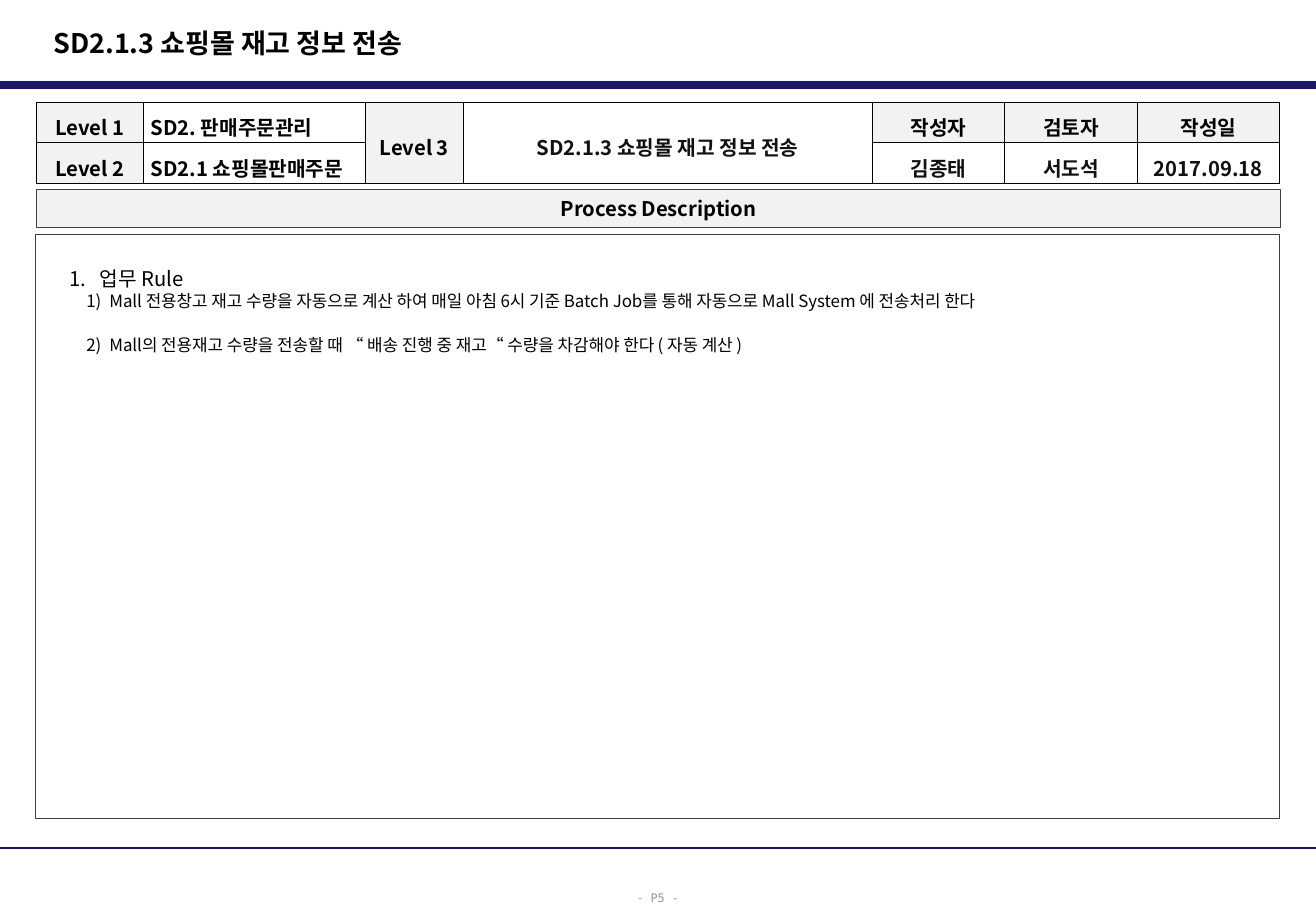
from dataclasses import dataclass

import pptx
import pptx.dml.color
import pptx.enum.shapes
import pptx.enum.text
import pptx.oxml.ns
import pptx.util
from lxml import etree

Inches = pptx.util.Inches
Pt = pptx.util.Pt
Align = pptx.enum.text.PP_ALIGN
Anchor = pptx.enum.text.MSO_ANCHOR
qn = pptx.oxml.ns.qn


@dataclass(frozen=True)
class Theme:
    font: str = "Noto Sans CJK KR"
    page_font: str = "DejaVu Sans Mono"
    navy: str = "191966"
    panel: str = "F2F2F2"
    frame: str = "404040"
    black: str = "000000"
    ink: str = "111111"
    grey: str = "969696"
    title_size: float = 16
    label_size: float = 12
    detail_size: float = 10
    page_size: float = 7
    hairline: float = 0.5


THEME = Theme()
TITLE = "SD2.1.3 쇼핑몰 재고 정보 전송"
COLUMN_WIDTHS = [0.88, 1.83, 0.8, 3.37, 1.09, 1.09, 1.17]
ROW_HEIGHTS = [0.28, 0.31]
HEADER_ROWS = [
    ["Level 1", "SD2. 판매주문관리", "Level 3", TITLE, "작성자", "검토자", "작성일"],
    ["Level 2", "SD2.1 쇼핑몰판매주문", "", "", "김종태", "서도석", "2017.09.18"],
]
LABELS = {"Level 1", "Level 2", "Level 3", "작성자", "검토자", "작성일"}
RULES = [
    "Mall 전용창고 재고 수량을 자동으로 계산 하여 매일 아침 6시 기준 Batch Job를 통해 "
    "자동으로 Mall System 에 전송처리 한다",
    "Mall의 전용재고 수량을 전송할 때 “ 배송 진행 중 재고“ 수량을 차감해야 한다 ( 자동 계산 )",
]


def rgb(value):
    return pptx.dml.color.RGBColor.from_string(value)


def apply_format(target, formats):
    for name, value in formats.items():
        setattr(target, name, value)


def place(shape, left, top, width, height):
    lengths = dict(left=left, top=top, width=width, height=height)
    apply_format(shape, {name: Inches(value) for name, value in lengths.items()})


def write(paragraph, text, size, color=THEME.black, bold=False, font=THEME.font, **formats):
    apply_format(paragraph, formats)
    run = paragraph.add_run()
    run.text = text
    apply_format(run.font, {"name": font, "size": Pt(size), "bold": bold})
    run.font.color.rgb = rgb(color)
    etree.SubElement(run.font._element, qn("a:ea"), typeface=font)


def number_paragraph(paragraph, scheme, margin, hanging):
    """Give the paragraph automatic numbering with a hanging indent."""
    properties = paragraph._p.get_or_add_pPr()
    properties.set("marL", str(Inches(margin)))
    properties.set("indent", str(-Inches(hanging)))
    etree.SubElement(properties, qn("a:buFont"), typeface=THEME.font)
    etree.SubElement(properties, qn("a:buAutoNum"), type=scheme)


def outline(shape):
    shape.line.color.rgb = rgb(THEME.frame)
    shape.line.width = Pt(THEME.hairline)


def add_rule(slide, top, weight):
    """Draw a line across the whole slide."""
    rule = slide.shapes.add_connector(
        pptx.enum.shapes.MSO_CONNECTOR.STRAIGHT,
        Inches(0), Inches(top), Inches(10.83), Inches(top))
    rule.line.color.rgb = rgb(THEME.navy)
    rule.line.width = Pt(weight)
    etree.SubElement(rule._element.spPr, qn("a:effectLst"))


def add_title(slide):
    title = slide.shapes.title
    place(title, 0.34, 0.16, 7.11, 0.38)
    apply_format(title.text_frame, {
        "vertical_anchor": Anchor.MIDDLE, "word_wrap": True,
        "auto_size": pptx.enum.text.MSO_AUTO_SIZE.NONE})
    write(title.text_frame.paragraphs[0], TITLE, THEME.title_size, bold=True,
          alignment=Align.LEFT)


def add_section_bar(slide):
    bar = slide.shapes.add_shape(
        pptx.enum.shapes.MSO_SHAPE.RECTANGLE,
        Inches(0.3), Inches(1.56), Inches(10.24), Inches(0.31))
    bar.shadow.inherit = False
    bar.fill.solid()
    bar.fill.fore_color.rgb = rgb(THEME.panel)
    outline(bar)
    bar.text_frame.vertical_anchor = Anchor.MIDDLE
    write(bar.text_frame.paragraphs[0], "Process Description", THEME.label_size,
          bold=True, alignment=Align.CENTER)


def add_cell_borders(cell):
    properties = cell._tc.get_or_add_tcPr()
    for side in ("lnL", "lnR", "lnT", "lnB"):
        border = etree.SubElement(properties, qn(f"a:{side}"), w=str(Pt(THEME.hairline)))
        fill = etree.SubElement(border, qn("a:solidFill"))
        etree.SubElement(fill, qn("a:srgbClr"), val=THEME.black)


def format_cell(cell, text, column):
    apply_format(cell, {
        "vertical_anchor": Anchor.MIDDLE,
        "margin_left": Inches(0.06), "margin_right": Inches(0.06),
        "margin_top": Inches(0.01), "margin_bottom": Inches(0.01)})
    add_cell_borders(cell)
    if text in LABELS:
        cell.fill.solid()
        cell.fill.fore_color.rgb = rgb(THEME.panel)
    else:
        cell.fill.background()
    if text:
        is_value = column >= 3 and text not in LABELS
        write(cell.text_frame.paragraphs[0], text, THEME.label_size,
              THEME.ink if is_value else THEME.black, bold=True, line_spacing=1.3,
              alignment=Align.LEFT if column == 1 else Align.CENTER)


def add_header_table(slide):
    table = slide.shapes.add_table(
        len(ROW_HEIGHTS), len(COLUMN_WIDTHS),
        Inches(0.3), Inches(0.84), Inches(10.24), Inches(0.59)).table
    apply_format(table, {"first_row": False, "horz_banding": False})
    for column, width in zip(table.columns, COLUMN_WIDTHS):
        column.width = Inches(width)
    for row, height in zip(table.rows, ROW_HEIGHTS):
        row.height = Inches(height)
    for row, texts in enumerate(HEADER_ROWS):
        for column, text in enumerate(texts):
            format_cell(table.cell(row, column), text, column)
    for column in (2, 3):
        table.cell(0, column).merge(table.cell(1, column))


def add_description(slide):
    body = slide.placeholders[1]
    place(body, 0.29, 1.93, 10.24, 4.81)
    outline(body)
    frame = body.text_frame
    apply_format(frame, {
        "vertical_anchor": Anchor.TOP, "word_wrap": True,
        "auto_size": pptx.enum.text.MSO_AUTO_SIZE.NONE,
        "margin_left": Inches(0.28), "margin_top": Inches(0.26),
        "margin_right": Inches(0.1), "margin_bottom": Inches(0.05)})
    spacing = {"line_spacing": 1.0, "space_before": Pt(0), "alignment": Align.LEFT}
    heading = frame.paragraphs[0]
    write(heading, "업무 Rule", THEME.label_size, **spacing)
    number_paragraph(heading, "arabicPeriod", 0.25, 0.25)
    for index, text in enumerate(RULES):
        spacing["space_before"] = Pt(14.5 * index)
        paragraph = frame.add_paragraph()
        write(paragraph, text, THEME.detail_size, level=1, **spacing)
        number_paragraph(paragraph, "arabicParenR", 0.33, 0.19)


def add_page_number(slide):
    box = slide.shapes.add_textbox(Inches(5.14), Inches(7.25), Inches(0.56), Inches(0.25))
    box.text_frame.word_wrap = False
    write(box.text_frame.paragraphs[0], "- P5 -", THEME.page_size, THEME.grey,
          font=THEME.page_font, line_spacing=1.3)


def main():
    presentation = pptx.Presentation()
    apply_format(presentation, {"slide_width": Inches(10.83), "slide_height": Inches(7.5)})
    slide = presentation.slides.add_slide(presentation.slide_layouts[1])
    add_rule(slide, 0.7, 4.5)
    add_rule(slide, 6.98, 1.5)
    add_title(slide)
    add_section_bar(slide)
    add_header_table(slide)
    add_description(slide)
    add_page_number(slide)
    presentation.save("out.pptx")


if __name__ == "__main__":
    main()
